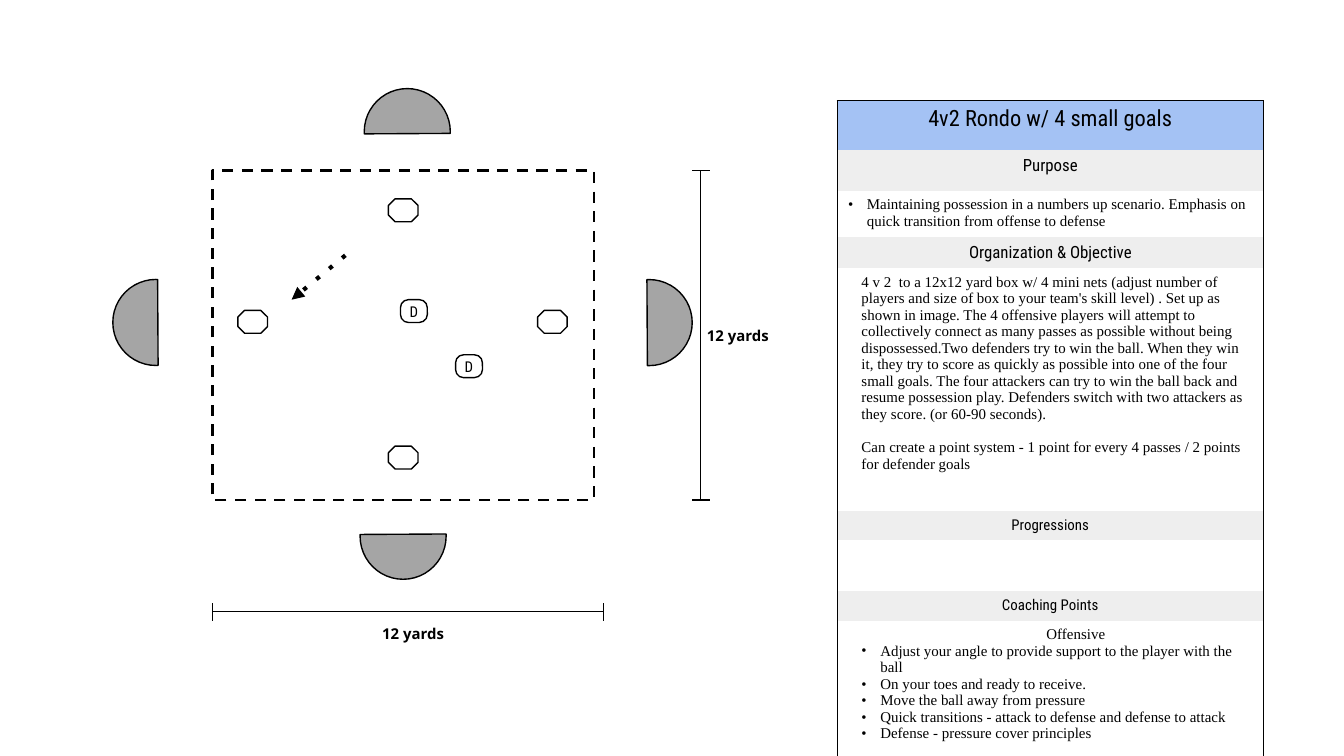
from typing import NamedTuple

from lxml import etree
from pptx import Presentation
from pptx.dml.color import RGBColor
from pptx.enum.dml import MSO_LINE
from pptx.enum.shapes import MSO_CONNECTOR, MSO_SHAPE
from pptx.enum.text import MSO_ANCHOR, PP_ALIGN
from pptx.oxml.ns import qn
from pptx.util import Inches, Pt

BLACK = RGBColor(0x00, 0x00, 0x00)
WHITE = RGBColor(0xFF, 0xFF, 0xFF)
GOAL_GRAY = RGBColor(0xA5, 0xA5, 0xA5)
TITLE_BLUE = RGBColor(0xA4, 0xC2, 0xF4)
HEADER_GRAY = RGBColor(0xEE, 0xEE, 0xEE)

CENTER, LEFT = PP_ALIGN.CENTER, PP_ALIGN.LEFT
RECTANGLE, OCTAGON = MSO_SHAPE.RECTANGLE, MSO_SHAPE.OCTAGON
CHORD, ROUNDED = MSO_SHAPE.CHORD, MSO_SHAPE.ROUNDED_RECTANGLE
STRAIGHT = MSO_CONNECTOR.STRAIGHT

HEADING_FONT = "Roboto Condensed"
BODY_FONT = "Times New Roman"
LABEL_FONT = "Open Sans"


class Line(NamedTuple):
    text: str
    font: str = BODY_FONT
    size: float = 8
    align: PP_ALIGN = LEFT
    indent: float = 0
    bullet: bool = False
    space_before: float = 0


class Row(NamedTuple):
    height: float
    fill: RGBColor
    lines: list[Line]


class Goal(NamedTuple):
    left: float
    top: float
    rotation: int


def heading(text: str, size: float) -> list[Line]:
    return [Line(text, HEADING_FONT, size, CENTER)]


def bullets(indent: float, *texts: str) -> list[Line]:
    return [Line(text, indent=indent, bullet=True) for text in texts]


ROWS = [
    Row(0.37, TITLE_BLUE, heading("4v2 Rondo w/ 4 small goals", 12)),
    Row(0.3, HEADER_GRAY, heading("Purpose", 9)),
    Row(0.34, WHITE, bullets(
        0.14, "Maintaining possession in a numbers up scenario. Emphasis on "
        "quick transition from offense to defense")),
    Row(0.22, HEADER_GRAY, heading("Organization & Objective", 9)),
    Row(1.81, WHITE, [
        Line("4 v 2  to a 12x12 yard box w/ 4 mini nets (adjust number of players and "
             "size of box to your team's skill level) . Set up as shown in image. The 4 "
             "offensive players will attempt to collectively connect as many passes as "
             "possible without being dispossessed.Two defenders try to win the ball. "
             "When they win it, they try to score as quickly as possible into one of "
             "the four small goals. The four attackers can try to win the ball back and "
             "resume possession play. Defenders switch with two attackers as they "
             "score. (or 60-90 seconds).", indent=0.1),
        Line("Can create a point system - 1 point for every 4 passes / 2 points for "
             "defender goals", indent=0.1, space_before=8.9)]),
    Row(0.2, HEADER_GRAY, heading("Progressions", 8)),
    Row(0.38, WHITE, []),
    Row(0.22, HEADER_GRAY, heading("Coaching Points", 8)),
    Row(1.05, WHITE, [Line("Offensive", align=CENTER, indent=0.38)] + bullets(
        0.24, "Adjust your angle to provide support to the player with the ball",
        "On your toes and ready to receive.",
        "Move the ball away from pressure",
        "Quick transitions - attack to defense and defense to attack",
        "Defense - pressure cover principles")),
]
ATTACKERS = [(2.89, 3.32), (4, 2.31), (2.89, 1.48), (1.77, 2.31)]
DEFENDERS = [(2.98, 2.23), (3.39, 2.64)]
GOALS = [Goal(0.84, 2.08, 0), Goal(2.71, 0.66, 90),
         Goal(2.68, 3.67, 270), Goal(4.51, 2.08, 180)]


def write_line(para, line: Line) -> None:
    para.text = line.text
    para.alignment = line.align
    properties = para._p.get_or_add_pPr()
    if line.indent:
        properties.set("marL", str(Inches(line.indent)))
        properties.set("indent", str(Inches(-0.14 if line.bullet else 0)))
    if line.bullet:
        color = etree.SubElement(properties, qn("a:buClr"))
        etree.SubElement(color, qn("a:srgbClr"), val=str(BLACK))
        etree.SubElement(properties, qn("a:buFont"), typeface=BODY_FONT)
        etree.SubElement(properties, qn("a:buChar"), char="•")
    if line.space_before:
        para.space_before = Pt(line.space_before)
    for span in para.runs:
        span.font.name = line.font
        span.font.size = Pt(line.size)
        span.font.color.rgb = BLACK


def add_outline(shapes, kind, left: float, top: float, width: float, height: float,
                fill: RGBColor | None = None, line_width: float = 0.75):
    shape = shapes.add_shape(kind, Inches(left), Inches(top), Inches(width), Inches(height))
    shape.shadow.inherit = False
    if fill is None:
        shape.fill.background()
    else:
        shape.fill.solid()
        shape.fill.fore_color.rgb = fill
    shape.line.color.rgb = BLACK
    shape.line.width = Pt(line_width)
    return shape


def add_line(shapes, x1: float, y1: float, x2: float, y2: float, width: float = 0.75):
    line = shapes.add_connector(STRAIGHT, Inches(x1), Inches(y1), Inches(x2), Inches(y2))
    line.line.color.rgb = BLACK
    line.line.width = Pt(width)
    etree.SubElement(line._element.spPr, qn("a:effectLst"))
    return line


def add_label(shapes, left: float, top: float, width: float, align: PP_ALIGN) -> None:
    box = shapes.add_textbox(Inches(left), Inches(top), Inches(width), Inches(0.13))
    frame = box.text_frame
    frame.word_wrap = True
    frame.margin_left = frame.margin_right = frame.margin_top = frame.margin_bottom = 0
    write_line(frame.paragraphs[0], Line("12 yards", LABEL_FONT, align=align))
    frame.paragraphs[0].runs[0].font.bold = True


def set_borders(cell, visible: set[str]) -> None:
    properties = cell._tc.get_or_add_tcPr()
    for side in "LRTB":
        border = etree.SubElement(properties, qn(f"a:ln{side}"), w=str(Pt(0.75)))
        if side in visible:
            fill = etree.SubElement(border, qn("a:solidFill"))
            etree.SubElement(fill, qn("a:srgbClr"), val=str(BLACK))
        else:
            etree.SubElement(border, qn("a:noFill"))


def add_plan(shapes) -> None:
    height = sum(row.height for row in ROWS)
    table = shapes.add_table(len(ROWS), 1, Inches(6.23), Inches(0.75),
                             Inches(3.17), Inches(height)).table
    table.first_row = table.horz_banding = False
    for index, row in enumerate(ROWS):
        table.rows[index].height = Inches(row.height)
        cell = table.cell(index, 0)
        cell.margin_left = cell.margin_right = Inches(0.08)
        cell.margin_top = cell.margin_bottom = Inches(0.04)
        ends = {0: {"T"}, len(ROWS) - 1: {"B"}}
        set_borders(cell, {"L", "R"} | ends.get(index, set()))
        cell.fill.solid()
        cell.fill.fore_color.rgb = row.fill
        frame = cell.text_frame
        for number, line in enumerate(row.lines):
            write_line(frame.add_paragraph() if number else frame.paragraphs[0], line)


def main() -> None:
    deck = Presentation()
    # Widescreen, 16:9
    deck.slide_width, deck.slide_height = Inches(10), Inches(10 * 9 / 16)
    shapes = deck.slides.add_slide(deck.slide_layouts[6]).shapes

    # Playing area
    area = add_outline(shapes, RECTANGLE, 1.58, 1.27, 2.84, 2.45, line_width=1.5)
    area.line.dash_style = MSO_LINE.DASH

    # Dimensions
    side = shapes.add_group_shape().shapes
    add_line(side, 5.21, 1.27, 5.21, 3.72)
    for y in (1.27, 3.72):
        add_line(side, 5.28, y, 5.15, y)
    add_label(side, 5.26, 2.43, 0.51, LEFT)
    bottom = shapes.add_group_shape().shapes
    add_line(bottom, 4.49, 4.55, 1.58, 4.55)
    for x in (1.58, 4.49):
        add_line(bottom, x, 4.62, x, 4.49)
    add_label(bottom, 2.56, 4.65, 1.03, CENTER)

    # Session plan
    add_plan(shapes)

    # Pass arrow
    arrow = add_line(shapes, 2.57, 1.9, 2.17, 2.23, 2.25)
    stroke = arrow._element.spPr.find(qn("a:ln"))
    etree.SubElement(stroke, qn("a:prstDash"), val="dot")
    etree.SubElement(stroke, qn("a:tailEnd"), type="triangle")

    # Players and goals
    for left, top in ATTACKERS:
        add_outline(shapes, OCTAGON, left, top, 0.22, 0.17, WHITE).adjustments[0] = 0.29
    for left, top in DEFENDERS:
        defender = add_outline(shapes, ROUNDED, left, top, 0.2, 0.17, WHITE)
        defender.adjustments[0] = 0.35
        frame = defender.text_frame
        frame.margin_left = frame.margin_right = frame.margin_top = frame.margin_bottom = 0
        frame.vertical_anchor = MSO_ANCHOR.MIDDLE
        write_line(frame.paragraphs[0], Line("D", HEADING_FONT, align=CENTER))
    for goal in GOALS:
        net = add_outline(shapes, CHORD, goal.left, goal.top, 0.64, 0.64, GOAL_GRAY)
        net.adjustments[0], net.adjustments[1] = 52.2, 163.41
        net.rotation = goal.rotation

    deck.save("out.pptx")


if __name__ == "__main__":
    main()
